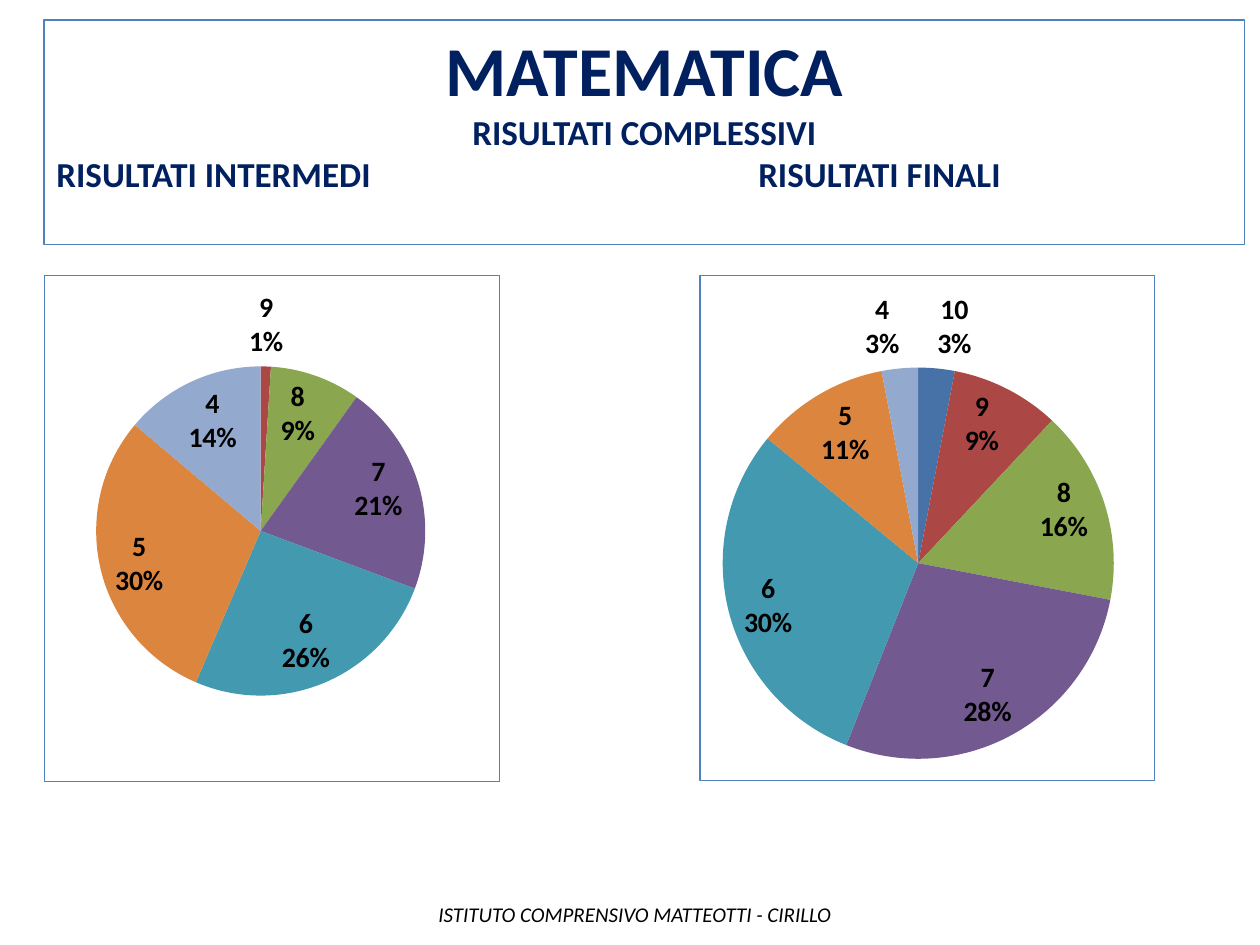
from lxml import etree
from pptx import Presentation
from pptx.chart.data import CategoryChartData
from pptx.dml.color import RGBColor
from pptx.enum.chart import XL_CHART_TYPE, XL_LABEL_POSITION
from pptx.enum.shapes import MSO_SHAPE
from pptx.enum.text import MSO_ANCHOR, PP_ALIGN
from pptx.oxml import parse_xml
from pptx.oxml.ns import nsdecls, qn
from pptx.util import Inches, Pt

PIE = XL_CHART_TYPE.PIE
BEST_FIT = XL_LABEL_POSITION.BEST_FIT
RECTANGLE = MSO_SHAPE.RECTANGLE
TOP = MSO_ANCHOR.TOP
LEFT, CENTER = PP_ALIGN.LEFT, PP_ALIGN.CENTER

COLORS = {"border": "4F81BD", "heading": "002060", "text": "000000"}
GRADE_COLORS = {
    "10": "4672A8", "9": "AB4744", "8": "8AA64F", "7": "725990",
    "6": "4299B0", "5": "DC853E", "4": "93A9CE",
}


class SlideBuilder:
    """Holds the slide and its style, and adds each kind of element."""

    font_name = "Calibri"
    border_width = Pt(0.75)

    def __init__(self, slide):
        self.slide = slide

    def add_run(self, paragraph, text, size, color, bold=False, italic=False):
        run = paragraph.add_run()
        run.text = text
        font = run.font
        font.name, font.size, font.bold, font.italic = self.font_name, Pt(size), bold, italic
        font.color.rgb = RGBColor.from_string(COLORS[color])

    def add_heading(self, box, lines, tab_position):
        shape = self.slide.shapes.add_shape(RECTANGLE, *map(Inches, box))
        shape.shadow.inherit = False
        shape.fill.background()
        shape.line.color.rgb = RGBColor.from_string(COLORS["border"])
        shape.line.width = self.border_width
        frame = shape.text_frame
        frame.word_wrap = True
        frame.vertical_anchor = TOP
        for index, (text, size, alignment) in enumerate(lines):
            paragraph = frame.add_paragraph() if index else frame.paragraphs[0]
            paragraph.alignment = alignment
            if "\t" in text:
                properties = paragraph._p.get_or_add_pPr()
                tabs = etree.SubElement(properties, qn("a:tabLst"))
                etree.SubElement(tabs, qn("a:tab"), pos=str(Inches(tab_position)), algn="l")
            self.add_run(paragraph, text, size, "heading", bold=True)

    def add_footer(self, box, text):
        shape = self.slide.shapes.add_textbox(*map(Inches, box))
        shape.text_frame.word_wrap = True
        self.add_run(shape.text_frame.paragraphs[0], text, 12, "text", italic=True)

    def add_pie(self, box, values, layout):
        data = CategoryChartData()
        data.categories = list(GRADE_COLORS)
        data.add_series("Series 1", values)
        chart = self.slide.shapes.add_chart(PIE, *map(Inches, box), data).chart
        chart.has_title = False
        chart.has_legend = False
        chart.font.name = self.font_name
        chart.font.size = Pt(18)
        chart.font.color.rgb = RGBColor.from_string(COLORS["text"])
        chart.plots[0].vary_by_categories = True
        series = chart.plots[0].series[0]
        for index, color in enumerate(GRADE_COLORS.values()):
            slice_format = series.points[index].format
            slice_format.fill.solid()
            slice_format.fill.fore_color.rgb = RGBColor.from_string(color)
            slice_format.line.fill.background()
        self.label_slices(series, values)
        self.frame_chart(chart, layout)

    def label_slices(self, series, values):
        labels = series.data_labels
        labels.show_value = False
        labels.show_category_name = True
        labels.show_percentage = True
        labels.number_format = "0%"
        labels.number_format_is_linked = False
        labels.position = BEST_FIT
        labels.font.name = self.font_name
        labels.font.size = Pt(16)
        labels.font.bold = True
        labels.font.color.rgb = RGBColor.from_string(COLORS["text"])
        element = labels._element
        separator = parse_xml(f"<c:separator {nsdecls('c')}>\n</c:separator>")
        element.find(qn("c:showBubbleSize")).addnext(separator)
        empty = [index for index, value in enumerate(values) if not value]
        for position, index in enumerate(empty):
            element.insert(position, parse_xml(
                f'<c:dLbl {nsdecls("c")}><c:idx val="{index}"/><c:delete val="1"/></c:dLbl>'))

    def frame_chart(self, chart, layout):
        chart_element = chart._chartSpace.find(qn("c:chart"))
        chart_element.addnext(parse_xml(
            f'<c:spPr {nsdecls("c", "a")}><a:noFill/><a:ln w="{self.border_width}"><a:solidFill>'
            f'<a:srgbClr val="{COLORS["border"]}"/></a:solidFill></a:ln></c:spPr>'))
        plot_area = chart_element.find(qn("c:plotArea"))
        for old_layout in plot_area.findall(qn("c:layout")):
            plot_area.remove(old_layout)
        sizes = "".join(f'<c:{key} val="{value}"/>' for key, value in zip("xywh", layout))
        plot_area.insert(0, parse_xml(
            f'<c:layout {nsdecls("c")}><c:manualLayout><c:layoutTarget val="inner"/>'
            f'<c:xMode val="edge"/><c:yMode val="edge"/>{sizes}</c:manualLayout></c:layout>'))


def main():
    presentation = Presentation()
    presentation.slide_width, presentation.slide_height = Inches(10), Inches(7.5)
    builder = SlideBuilder(presentation.slides.add_slide(presentation.slide_layouts[6]))
    builder.add_heading((0.35, 0.16, 9.53, 1.78), [
        ("MATEMATICA", 40, CENTER),
        ("RISULTATI COMPLESSIVI", 20, CENTER),
        ("RISULTATI INTERMEDI\tRISULTATI FINALI", 20, LEFT),
    ], tab_position=5.57)
    builder.add_footer((3.38, 7.11, 3.45, 0.3), "ISTITUTO COMPRENSIVO MATTEOTTI - CIRILLO")
    builder.add_pie((0.35, 2.18, 3.62, 4.03), (0, 1, 9, 21, 26, 30, 14), (0.11, 0.18, 0.73, 0.65))
    builder.add_pie((5.55, 2.18, 3.62, 4.02), (3, 9, 16, 28, 30, 11, 3), (0.05, 0.18, 0.86, 0.78))
    presentation.save("out.pptx")


if __name__ == "__main__":
    main()
